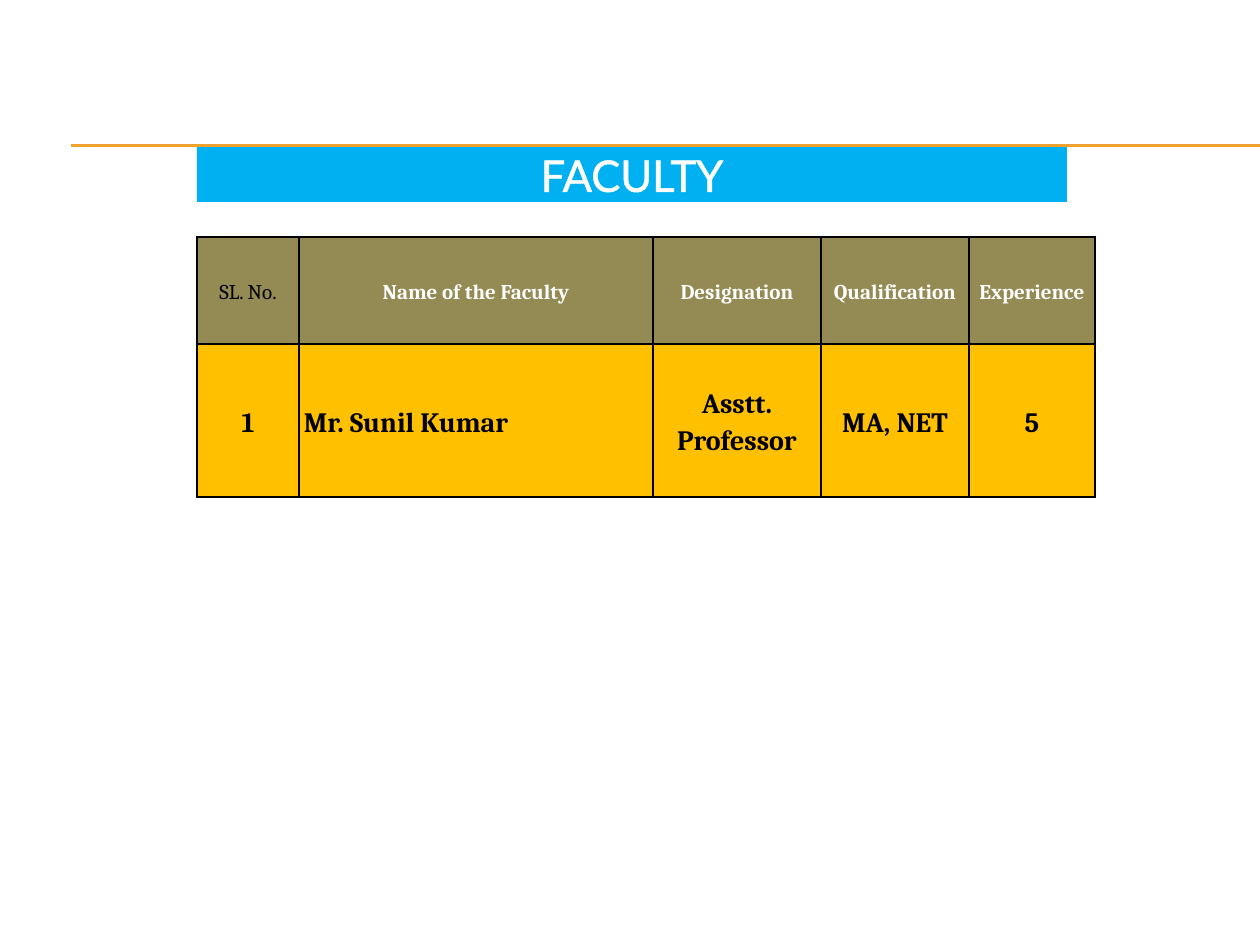
from lxml import etree
from pptx import Presentation
from pptx.dml.color import RGBColor
from pptx.enum.shapes import MSO_CONNECTOR
from pptx.enum.text import MSO_ANCHOR, PP_ALIGN
from pptx.oxml.ns import qn
from pptx.util import Pt

PX = 914400 // 126
STRAIGHT = MSO_CONNECTOR.STRAIGHT
MIDDLE = MSO_ANCHOR.MIDDLE
LEFT, CENTER = PP_ALIGN.LEFT, PP_ALIGN.CENTER

WHITE = RGBColor(0xFF, 0xFF, 0xFF)
BLACK = RGBColor(0, 0, 0)
ORANGE = RGBColor(0xF0, 0xA2, 0x2E)
BLUE = RGBColor(0x00, 0xB0, 0xF0)
OLIVE = RGBColor(0x94, 0x8A, 0x54)
AMBER = RGBColor(0xFF, 0xC0, 0x00)

COLUMN_WIDTHS = [102, 354, 168, 148, 126]
ROW_HEIGHTS = [107, 153]
HEADERS = ["SL. No.", "Name of the Faculty", "Designation", "Qualification", "Experience"]
FACULTY = ["1", "Mr. Sunil Kumar", "Asstt. Professor", "MA, NET", "5"]


def px(n):
    return n * PX


def set_all(obj, **values):
    for name, value in values.items():
        setattr(obj, name, value)


def set_text(tf, text, color, align, **font):
    p = tf.paragraphs[0]
    p.alignment = align
    r = p.add_run()
    r.text = text
    set_all(r.font, **font)
    r.font.color.rgb = color
    return r


def solid_line(tag, color, width):
    """Return a DrawingML line element with a solid colour."""
    ln = etree.Element(qn(tag), w=str(Pt(width)))
    fill = etree.SubElement(ln, qn("a:solidFill"))
    etree.SubElement(fill, qn("a:srgbClr"), val=str(color))
    return ln


def add_rule(slide, y):
    rule = slide.shapes.add_connector(STRAIGHT, px(71), px(y), px(1260), px(y))
    rule.line.color.rgb = ORANGE
    rule.line.width = Pt(0.75)
    etree.SubElement(rule._element.spPr, qn("a:effectLst"))


def add_title(slide, text):
    sp = slide.shapes.title
    set_all(sp, left=px(197), top=px(147), width=px(870), height=px(55))
    sp.fill.solid()
    sp.fill.fore_color.rgb = BLUE
    tf = sp.text_frame
    set_all(tf, vertical_anchor=MIDDLE, word_wrap=True, margin_top=0, margin_bottom=0)
    r = set_text(tf, text, WHITE, CENTER, name="Lato", size=Pt(24.9))
    r.font._element.insert(0, solid_line("a:ln", WHITE, 1.45))


def format_cell(cell, text, fill, color, align, size, bold):
    set_all(cell, vertical_anchor=MIDDLE, margin_left=px(5), margin_right=px(5),
            margin_top=0, margin_bottom=0)
    cell.fill.solid()
    cell.fill.fore_color.rgb = fill
    set_text(cell.text_frame, text, color, align, name="Cambria", size=Pt(size), bold=bold)
    cell.text_frame.paragraphs[0].line_spacing = 1.15
    tc_pr = cell._tc.get_or_add_tcPr()
    for i, side in enumerate("LRTB"):
        tc_pr.insert(i, solid_line(f"a:ln{side}", BLACK, 1))


def add_faculty_table(slide):
    table = slide.shapes.add_table(
        len(ROW_HEIGHTS), len(COLUMN_WIDTHS), px(197), px(237),
        px(sum(COLUMN_WIDTHS)), px(sum(ROW_HEIGHTS))).table
    for column, width in zip(table.columns, COLUMN_WIDTHS):
        column.width = px(width)
    for row, height in zip(table.rows, ROW_HEIGHTS):
        row.height = px(height)
    for col, (header, value) in enumerate(zip(HEADERS, FACULTY)):
        format_cell(table.cell(0, col), header, OLIVE, WHITE if col else BLACK,
                    CENTER, 12, col > 0)
        format_cell(table.cell(1, col), value, AMBER, BLACK,
                    LEFT if col == 1 else CENTER, 16, True)


def main():
    prs = Presentation()
    set_all(prs, slide_width=px(1260), slide_height=px(945))
    slide = prs.slides.add_slide(prs.slide_layouts.get_by_name("Title Only"))
    for y in (145, 146):
        add_rule(slide, y)
    add_title(slide, "FACULTY")
    add_faculty_table(slide)
    prs.save("out.pptx")


if __name__ == "__main__":
    main()
